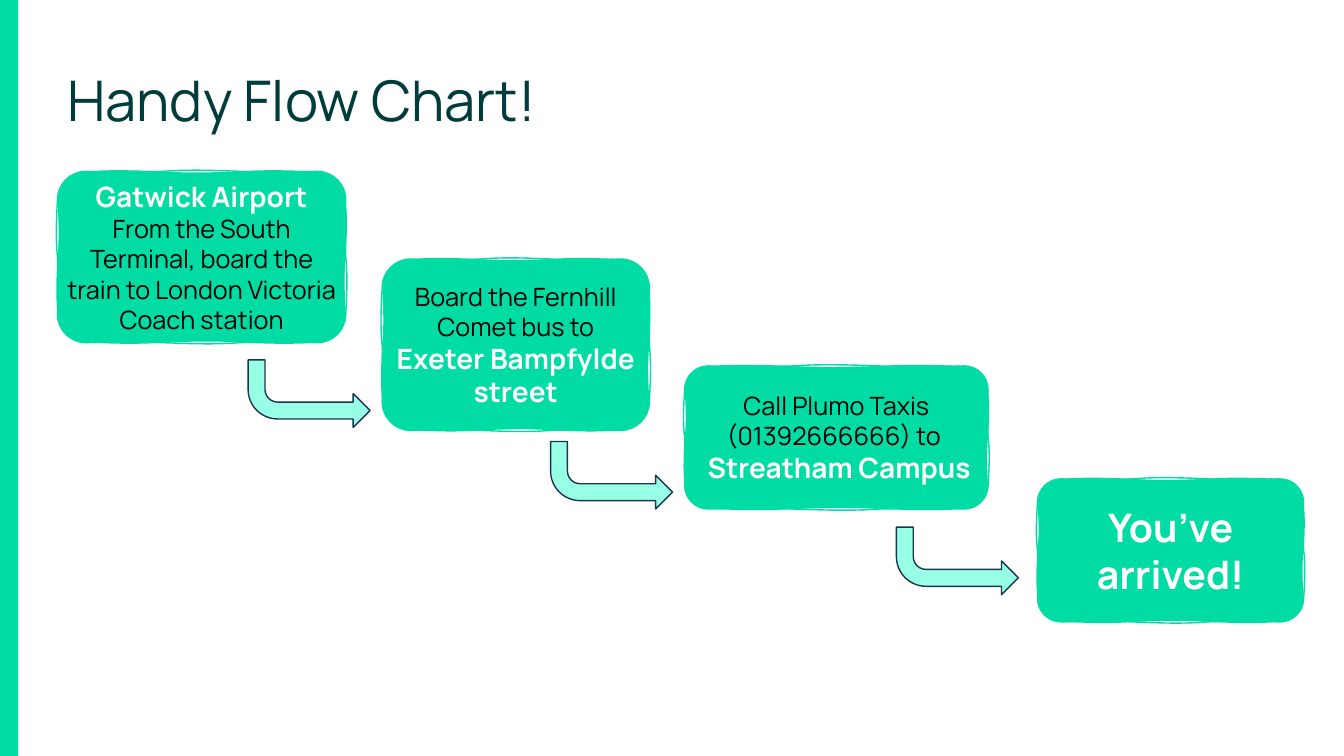
from dataclasses import dataclass

from lxml import etree
from pptx import Presentation
from pptx.dml.color import RGBColor
from pptx.enum.shapes import MSO_SHAPE
from pptx.enum.text import MSO_ANCHOR, PP_ALIGN
from pptx.oxml.ns import qn
from pptx.util import Inches, Pt

RECTANGLE = MSO_SHAPE.RECTANGLE
BENT_ARROW = MSO_SHAPE.BENT_ARROW
MIDDLE = MSO_ANCHOR.MIDDLE
LEFT, CENTER = PP_ALIGN.LEFT, PP_ALIGN.CENTER
TITLE_ONLY_LAYOUT = 5


@dataclass(frozen=True)
class Theme:
    font: str = "Manrope"
    green: RGBColor = RGBColor(0x01, 0xDC, 0xA5)
    mint: RGBColor = RGBColor(0x97, 0xFF, 0xE4)
    navy: RGBColor = RGBColor(0x1E, 0x32, 0x56)
    teal: RGBColor = RGBColor(0x00, 0x3C, 0x3B)
    black: RGBColor = RGBColor(0, 0, 0)
    white: RGBColor = RGBColor(255, 255, 255)
    title_size: int = 40
    finish_size: int = 28
    place_size: int = 20
    body_size: int = 18


THEME = Theme()

# Text styles: size, colour, bold
BODY = (THEME.body_size, THEME.black, False)
PLACE = (THEME.place_size, THEME.white, True)
FINISH = (THEME.finish_size, THEME.white, True)

STEPS = [
    ((0.57, 1.7, 2.86, 1.7), [
        ("Gatwick Airport", PLACE),
        ("From the South Terminal, board the train to London Victoria Coach station", BODY)]),
    ((3.79, 2.57, 2.65, 1.7), [
        ("Board the Fernhill Comet bus to", BODY),
        ("Exeter Bampfylde street", PLACE)]),
    ((6.79, 3.63, 3.01, 1.42), [
        ("Call Plumo Taxis (01392666666) to ", BODY),
        (" Streatham Campus", PLACE)]),
    ((10.29, 4.75, 2.64, 1.42), [("You’ve arrived!", FINISH)]),
]
ARROW_SIZE = (1.21, 0.67)
ARROW_CORNERS = [(2.46, 3.57), (5.46, 4.38), (8.89, 5.23)]


def paint(shape, fill, line):
    shape.shadow.inherit = False
    shape.fill.solid()
    shape.fill.fore_color.rgb = fill
    shape.line.color.rgb = line
    shape.line.width = Pt(1)


def style_paragraph(paragraph, style, alignment):
    size, color, bold = style
    paragraph.alignment = alignment
    for run in paragraph.runs:
        run.font.name = THEME.font
        run.font.size = Pt(size)
        run.font.color.rgb = color
        run.font.bold = bold


def sketched_curves(width, height, wobble):
    """Return the start and the Bézier curves of a rounded box with wavering sides."""
    radius = min(width, height) / 6
    # Each side: sharp corner before it, direction along it, length, curves in it
    sides = [((0, 0), (1, 0), width, 3), ((width, 0), (0, 1), height, 2),
             ((width, height), (-1, 0), width, 3), ((0, height), (0, -1), height, 2)]
    curves = []
    for (x, y), (along_x, along_y), length, count in sides:
        def place(distance, outward=0):
            return (x + along_x * distance + along_y * outward,
                    y + along_y * distance - along_x * outward)

        # The corner arrives on the previous side, whose inward end lies one radius off
        arrival = [place(0, -radius), place(0, -radius * 0.45), place(radius * 0.45)]
        curves.append((arrival[1], arrival[2], place(radius)))
        part = (length - 2 * radius) / count
        for number in range(count):
            start = radius + part * number
            bend = wobble * (-1) ** number
            curves.append((place(start + part / 3, bend),
                           place(start + part * 2 / 3, bend / 2),
                           place(start + part)))
    return (0, radius), curves


def add_path(path_list, box_size, wobble, **paint_mode):
    width, height = box_size
    path = etree.SubElement(path_list, qn("a:path"), w=str(Inches(width)),
                            h=str(Inches(height)), **paint_mode)

    def add_command(name, points):
        command = etree.SubElement(path, qn(name))
        for x, y in points:
            etree.SubElement(command, qn("a:pt"), x=str(Inches(x)), y=str(Inches(y)))

    start, curves = sketched_curves(width, height, wobble)
    add_command("a:moveTo", [start])
    for curve in curves:
        add_command("a:cubicBezTo", curve)
    add_command("a:close", [])


def add_step(slide, box, lines):
    left, top, width, height = box
    builder = slide.shapes.build_freeform(Inches(left), Inches(top))
    corners = [(left + width, top), (left + width, top + height), (left, top + height)]
    builder.add_line_segments([(Inches(x), Inches(y)) for x, y in corners], close=True)
    card = builder.convert_to_shape()
    path_list = card._element.spPr.find(".//" + qn("a:pathLst"))
    path_list.clear()
    add_path(path_list, (width, height), -0.02, fill="none")
    add_path(path_list, (width, height), 0.02, stroke="0")
    paint(card, THEME.green, THEME.green)

    text_frame = card.text_frame
    text_frame.word_wrap = True
    text_frame.vertical_anchor = MIDDLE
    text_frame.margin_left = text_frame.margin_right = Inches(0.07)
    text_frame.text = "\n".join(text for text, _ in lines)
    for paragraph, (_, style) in zip(text_frame.paragraphs, lines):
        style_paragraph(paragraph, style, CENTER)


def add_arrow(slide, box):
    """Add an arrow that drops down and then turns right."""
    arrow = slide.shapes.add_shape(BENT_ARROW, *map(Inches, box))
    paint(arrow, THEME.mint, THEME.navy)
    arrow.rotation = 180
    arrow._element.spPr.xfrm.set("flipH", "1")


def add_side_bar(slide, box):
    bar = slide.shapes.add_shape(RECTANGLE, *map(Inches, box))
    paint(bar, THEME.green, THEME.green)
    bar.line.fill.background()


def set_title(slide, box, text):
    title = slide.shapes.title
    title.left, title.top, title.width, title.height = map(Inches, box)
    text_frame = title.text_frame
    text_frame.text = text
    text_frame.vertical_anchor = MIDDLE
    paragraph = text_frame.paragraphs[0]
    paragraph.line_spacing = 0.9
    style_paragraph(paragraph, (THEME.title_size, THEME.teal, False), LEFT)


def build_flow_slide(presentation):
    slide = presentation.slides.add_slide(presentation.slide_layouts[TITLE_ONLY_LAYOUT])
    add_side_bar(slide, (0, 0, 0.18, 7.5))
    set_title(slide, (0.57, 0.69, 9.08, 0.67), "Handy Flow Chart!")
    for box, lines in STEPS:
        add_step(slide, box, lines)
    for corner in ARROW_CORNERS:
        add_arrow(slide, corner + ARROW_SIZE)


def main():
    presentation = Presentation()
    presentation.slide_width = Inches(13.33)
    presentation.slide_height = Inches(7.5)
    build_flow_slide(presentation)
    presentation.save("out.pptx")


if __name__ == "__main__":
    main()
